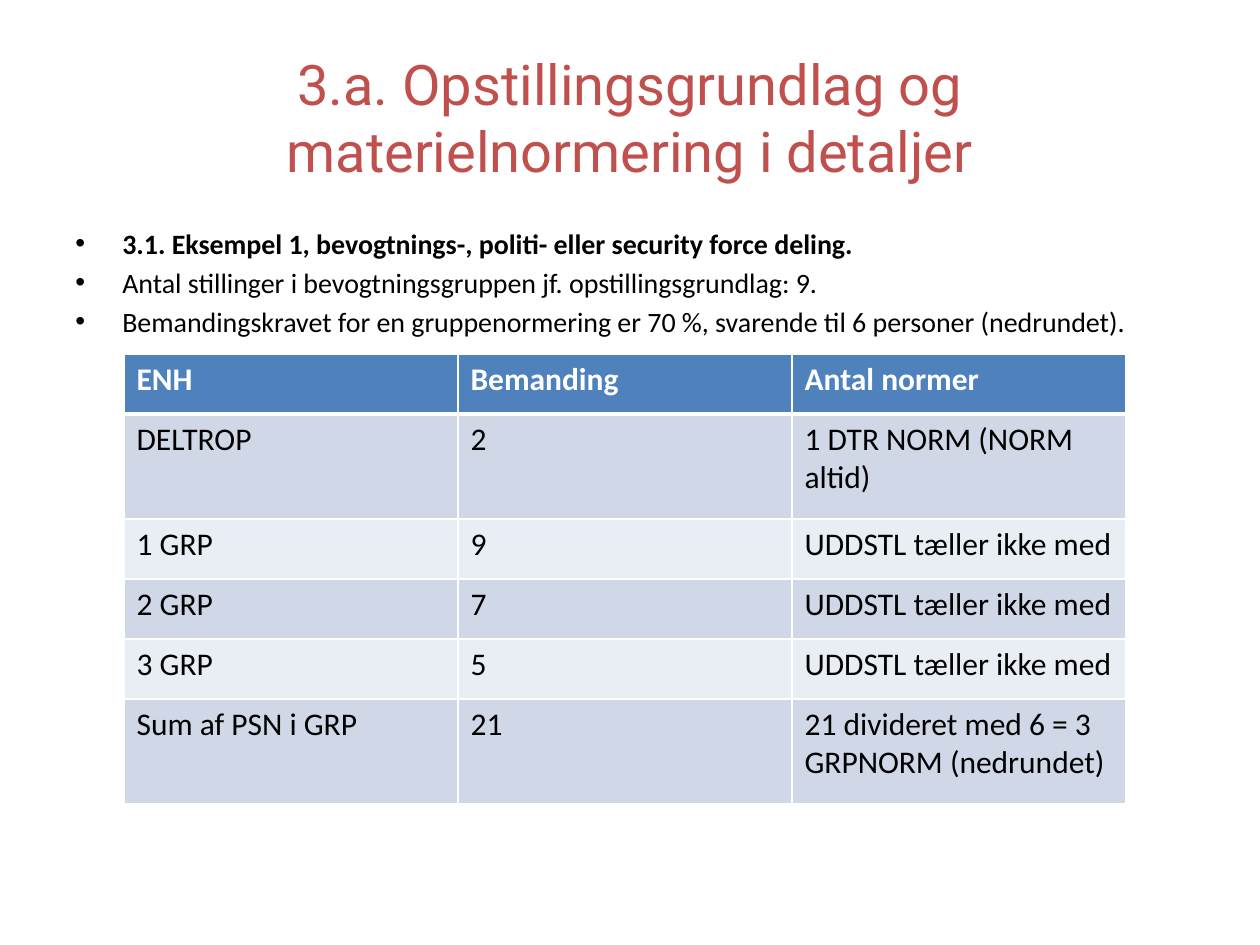
from dataclasses import dataclass

from lxml import etree
from pptx import Presentation
from pptx.dml.color import RGBColor
from pptx.enum.text import MSO_ANCHOR, PP_ALIGN
from pptx.oxml.ns import qn
from pptx.util import Emu, Pt

CENTER, LEFT = PP_ALIGN.CENTER, PP_ALIGN.LEFT
MIDDLE, TOP = MSO_ANCHOR.MIDDLE, MSO_ANCHOR.TOP
EMU_PER_PX = 914400 / 126
BLANK_LAYOUT = 6
BLACK, WHITE, RED = "000000", "FFFFFF", "C0504D"
HEADER_FILL = "4F81BD"
BAND_FILLS = ("D0D8E8", "E9EDF4")
BULLET_INDENT = 47


@dataclass
class Box:
    left: int
    top: int
    width: int
    height: int


@dataclass
class Style:
    font: str
    size: int
    color: str
    bold: bool = False
    align: PP_ALIGN = LEFT


@dataclass
class Row:
    texts: tuple[str, str, str]
    height: int = 60


TITLE_BOX = Box(63, 38, 1134, 157)
BODY_BOX = Box(63, 220, 1134, 624)
TABLE_BOX = Box(124, 354, 1002, 450)
TITLE = "3.a. Opstillingsgrundlag og materielnormering i detaljer"
TITLE_STYLE = Style("Roboto", 32, RED, align=CENTER)
HEADING_STYLE = Style("Calibri", 16, BLACK, bold=True)
BULLET_STYLE = Style("Calibri", 16, BLACK)
HEADER_STYLE = Style("Calibri", 18, WHITE, bold=True)
CELL_STYLE = Style("Calibri", 18, BLACK)

BULLETS = (
    ("3.1. Eksempel 1, bevogtnings-, politi- eller security force deling.", HEADING_STYLE),
    ("Antal stillinger i bevogtningsgruppen jf. opstillingsgrundlag: 9.", BULLET_STYLE),
    ("Bemandingskravet for en gruppenormering er 70 %, svarende til 6 personer (nedrundet).", BULLET_STYLE),
)
ROWS = (
    Row(("ENH", "Bemanding", "Antal normer")),
    Row(("DELTROP", "2", "1 DTR NORM (NORM altid)"), 105),
    Row(("1 GRP", "9", "UDDSTL tæller ikke med")),
    Row(("2 GRP", "7", "UDDSTL tæller ikke med")),
    Row(("3 GRP", "5", "UDDSTL tæller ikke med")),
    Row(("Sum af PSN i GRP", "21", "21 divideret med 6 = 3 GRPNORM (nedrundet)"), 105),
)


def px(length: int) -> Emu:
    return Emu(round(length * EMU_PER_PX))


def place(box: Box) -> tuple[Emu, ...]:
    return tuple(px(value) for value in (box.left, box.top, box.width, box.height))


def rgb(color: str) -> RGBColor:
    return RGBColor.from_string(color)


def write(paragraph, text: str, style: Style) -> None:
    run = paragraph.add_run()
    run.text = text
    paragraph.alignment = style.align
    formats = {"name": style.font, "size": Pt(style.size), "bold": style.bold}
    for name, value in formats.items():
        setattr(run.font, name, value)
    run.font.color.rgb = rgb(style.color)


def add_text_frame(slide, box: Box, anchor: MSO_ANCHOR):
    frame = slide.shapes.add_textbox(*place(box)).text_frame
    frame.word_wrap = True
    frame.vertical_anchor = anchor
    return frame


def add_bullet(paragraph) -> None:
    paragraph.space_before = Pt(3.2)
    properties = paragraph._p.get_or_add_pPr()
    properties.set("marL", str(px(BULLET_INDENT)))
    properties.set("indent", str(-px(BULLET_INDENT)))
    etree.SubElement(properties, qn("a:buFont"), typeface="Arial")
    etree.SubElement(properties, qn("a:buChar"), char="•")


def add_borders(cell, widths: dict[str, int]) -> None:
    properties = cell._tc.get_or_add_tcPr()
    for index, (side, width) in enumerate(widths.items()):
        line = etree.Element(qn(f"a:ln{side}"), w=str(Pt(width)))
        fill = etree.SubElement(line, qn("a:solidFill"))
        etree.SubElement(fill, qn("a:srgbClr"), val=WHITE)
        properties.insert(index, line)


def add_norm_table(slide, box: Box, rows: tuple[Row, ...]) -> None:
    column_count = len(rows[0].texts)
    table = slide.shapes.add_table(len(rows), column_count, *place(box)).table
    table.horz_banding = False
    for column in table.columns:
        column.width = px(box.width // column_count)
    for row_index, row in enumerate(rows):
        table.rows[row_index].height = px(row.height)
        is_header = row_index == 0
        fill = HEADER_FILL if is_header else BAND_FILLS[(row_index - 1) % 2]
        style = HEADER_STYLE if is_header else CELL_STYLE
        widths = {"L": 1, "R": 1, "T": 3 if row_index == 1 else 1, "B": 3 if is_header else 1}
        for column_index, text in enumerate(row.texts):
            cell = table.cell(row_index, column_index)
            cell.fill.solid()
            cell.fill.fore_color.rgb = rgb(fill)
            write(cell.text_frame.paragraphs[0], text, style)
            add_borders(cell, widths)


def main() -> None:
    presentation = Presentation()
    presentation.slide_width = px(1260)
    presentation.slide_height = px(945)
    slide = presentation.slides.add_slide(presentation.slide_layouts[BLANK_LAYOUT])

    body = add_text_frame(slide, BODY_BOX, TOP)
    for index, (text, style) in enumerate(BULLETS):
        paragraph = body.add_paragraph() if index else body.paragraphs[0]
        write(paragraph, text, style)
        add_bullet(paragraph)

    title = add_text_frame(slide, TITLE_BOX, MIDDLE)
    write(title.paragraphs[0], TITLE, TITLE_STYLE)
    add_norm_table(slide, TABLE_BOX, ROWS)
    presentation.save("out.pptx")


if __name__ == "__main__":
    main()
